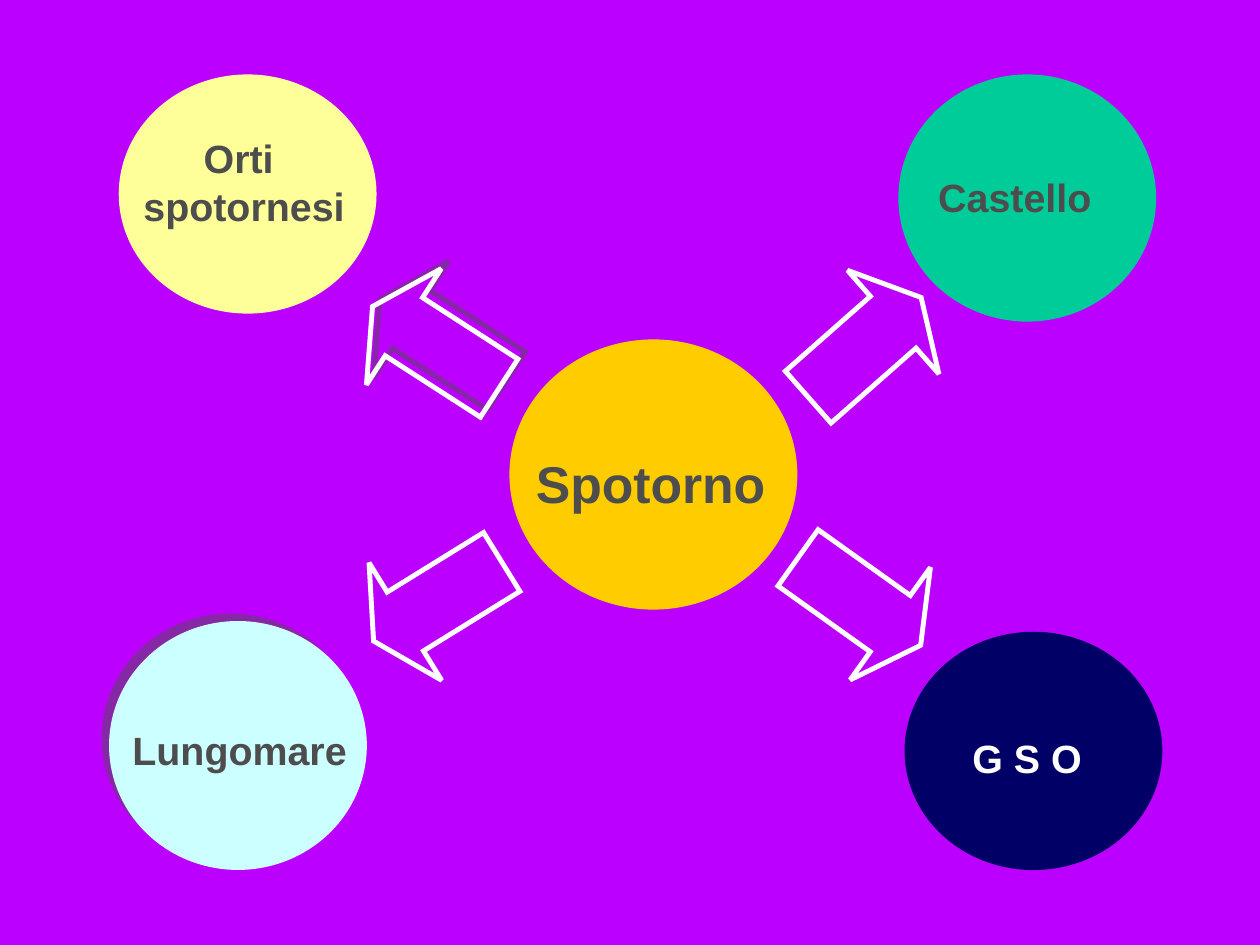
from lxml.etree import SubElement
from pptx import Presentation
from pptx.dml.color import RGBColor as RGB
from pptx.enum.shapes import MSO_SHAPE as SHAPE
from pptx.enum.text import MSO_ANCHOR as ANCHOR, PP_ALIGN as ALIGN
from pptx.oxml.ns import qn
from pptx.util import Pt

C = {"back": "BC00FF", "hub": "FFCC00", "orti": "FFFF99", "castello": "00CC99",
     "lungomare": "CCFFFF", "gso": "000066", "text": "4D4D4D",
     "white": "FFFFFF", "shadow": "51504D"}
LABEL_W = 219.6
ARROW_W, ARROW_H = 122.4, 112.3


def color(name):
    return RGB.from_string(C[name])


def cast_shadow(sp, angle):
    effects = sp._element.spPr.find(qn("a:effectLst"))
    shadow = SubElement(effects, qn("a:outerShdw"), dist=str(Pt(8.5)),
                        dir=str(angle * 60000), algn="ctr", rotWithShape="0")
    clr = SubElement(shadow, qn("a:srgbClr"), val=C["shadow"])
    SubElement(clr, qn("a:alpha"), val="50000")


def add_place(s, box, fill, text, offset, size=32, ink="text",
              align=ALIGN.CENTER, shadow=None):
    """Ellipse in the box, with its label offset from the box's corner."""
    x, y, w, h = box
    sp = s.shapes.add_shape(SHAPE.OVAL, Pt(x), Pt(y), Pt(w), Pt(h))
    sp.shadow.inherit = False
    sp.fill.solid()
    sp.fill.fore_color.rgb = color(fill)
    sp.line.fill.background()
    if shadow is not None:
        cast_shadow(sp, shadow)

    dx, dy = offset
    lines = text.count("\v") + 1
    label = s.shapes.add_textbox(Pt(x + dx), Pt(y + dy), Pt(LABEL_W),
                                 Pt(lines * size * 1.2 + 7.2))
    tf = label.text_frame
    tf.word_wrap = True
    tf.vertical_anchor = ANCHOR.TOP
    p = tf.paragraphs[0]
    p.text = text
    p.alignment = align
    p.font.name = "Arial"
    p.font.size = Pt(size)
    p.font.bold = True
    p.font.color.rgb = color(ink)


def add_arrow(s, x, y, rotation, shadow=None):
    """Outlined block arrow leading from the hub to a place."""
    sp = s.shapes.add_shape(SHAPE.LEFT_ARROW, Pt(x), Pt(y), Pt(ARROW_W), Pt(ARROW_H))
    sp.adjustments[0], sp.adjustments[1] = 0.5, 0.27
    sp.rotation = rotation
    sp.shadow.inherit = False
    sp.fill.background()
    sp.line.color.rgb = color("white")
    sp.line.width = Pt(4)
    SubElement(sp.line._get_or_add_ln(), qn("a:miter"), lim="800000")
    if shadow is not None:
        cast_shadow(sp, shadow)


def build_map(s):
    s.background.fill.solid()
    s.background.fill.fore_color.rgb = color("back")

    # Hub
    add_place(s, (414, 275.8, 234, 219.6), "hub", "Spotorno", (14.4, 87.8),
              size=42, align=ALIGN.LEFT)

    # Arrows
    add_arrow(s, 293, 226.1, 32.8, shadow=315)
    add_arrow(s, 641.5, 226.1, 138.6)
    add_arrow(s, 294.5, 432.7, 328.3)
    add_arrow(s, 637.2, 432.7, 215.5)

    # Places
    add_place(s, (96.5, 60.5, 209.5, 194.4), "orti", "Orti \vspotornesi", (-7.9, 45.3))
    add_place(s, (730.1, 60.5, 209.5, 200.9), "castello", "Castello", (-15.1, 77))
    add_place(s, (88.6, 504.7, 209.5, 202.3), "lungomare", "Lungomare", (-3.6, 82.1),
              shadow=225)
    add_place(s, (735.1, 513.4, 209.5, 193.7), "gso", "G S O", (-10.1, 79.9),
              ink="white")


def main():
    prs = Presentation()
    prs.slide_width, prs.slide_height = Pt(1024), Pt(768)
    build_map(prs.slides.add_slide(prs.slide_layouts[6]))
    prs.save("out.pptx")


if __name__ == "__main__":
    main()
